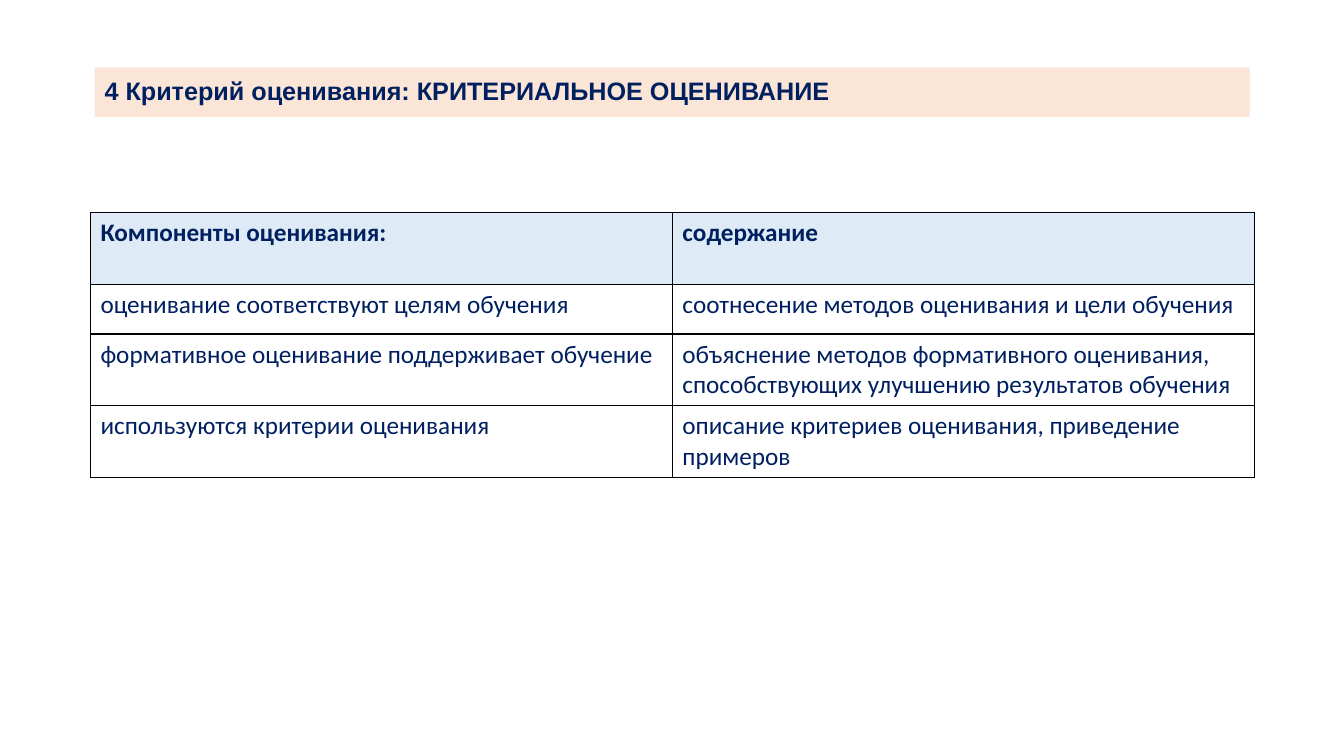
from lxml.etree import SubElement
from pptx import Presentation
from pptx.dml.color import RGBColor
from pptx.enum.shapes import MSO_SHAPE as Shape
from pptx.enum.text import MSO_ANCHOR as Anchor, PP_ALIGN as Align
from pptx.oxml.ns import qn
from pptx.util import Pt

NAVY = RGBColor(0x00, 0x20, 0x60)
PEACH = RGBColor(0xFB, 0xE5, 0xD6)
PALE_BLUE = RGBColor(0xDE, 0xEB, 0xF7)
BLACK = RGBColor(0x00, 0x00, 0x00)

CRITERIA = [
    ("Компоненты оценивания:", "содержание"),
    ("оценивание соответствуют целям обучения",
     "соотнесение методов оценивания и цели обучения"),
    ("формативное оценивание поддерживает обучение",
     "объяснение методов формативного оценивания, "
     "способствующих улучшению результатов обучения"),
    ("используются критерии оценивания",
     "описание критериев оценивания, приведение примеров"),
]
ROW_HEIGHTS = [51.4, 35.5, 51, 51]
COLUMN_WIDTH = 415.7


def write(frame, text, font_name, bold):
    paragraph = frame.paragraphs[0]
    paragraph.alignment = Align.LEFT
    run = paragraph.add_run()
    run.text = text
    style = {"name": font_name, "size": Pt(18), "bold": bold}
    for key, value in style.items():
        setattr(run.font, key, value)
    run.font.color.rgb = NAVY
    return paragraph


def add_borders(cell):
    properties = cell._tc.get_or_add_tcPr()
    for side in ("a:lnL", "a:lnR", "a:lnT", "a:lnB"):
        line = SubElement(properties, qn(side), w=str(Pt(1)))
        fill = SubElement(line, qn("a:solidFill"))
        SubElement(fill, qn("a:srgbClr"), val=str(BLACK))


prs = Presentation()
prs.slide_width, prs.slide_height = Pt(960), Pt(540)
slide = prs.slides.add_slide(prs.slide_layouts[6])

heading = slide.shapes.add_shape(
    Shape.RECTANGLE, Pt(67.6), Pt(48.2), Pt(825), Pt(35.3))
heading.shadow.inherit = False
heading.fill.solid()
heading.fill.fore_color.rgb = PEACH
heading.line.fill.background()
heading.text_frame.word_wrap = True
heading.text_frame.vertical_anchor = Anchor.MIDDLE
heading_line = write(
    heading.text_frame,
    "4 Критерий оценивания: КРИТЕРИАЛЬНОЕ ОЦЕНИВАНИЕ", "Arial", True)
heading_line.line_spacing = 0.9

criteria = slide.shapes.add_table(
    len(CRITERIA), 2, Pt(64.6), Pt(151.7),
    Pt(2 * COLUMN_WIDTH), Pt(sum(ROW_HEIGHTS))).table
for key, value in {"first_row": False, "horz_banding": False}.items():
    setattr(criteria, key, value)
for column in criteria.columns:
    column.width = Pt(COLUMN_WIDTH)

for row_index, (texts, height) in enumerate(zip(CRITERIA, ROW_HEIGHTS)):
    is_header = row_index == 0
    criteria.rows[row_index].height = Pt(height)
    for column_index, text in enumerate(texts):
        cell = criteria.cell(row_index, column_index)
        write(cell.text_frame, text, "Calibri", is_header)
        add_borders(cell)
        if is_header:
            cell.fill.solid()
            cell.fill.fore_color.rgb = PALE_BLUE
        else:
            cell.fill.background()

prs.save("out.pptx")
